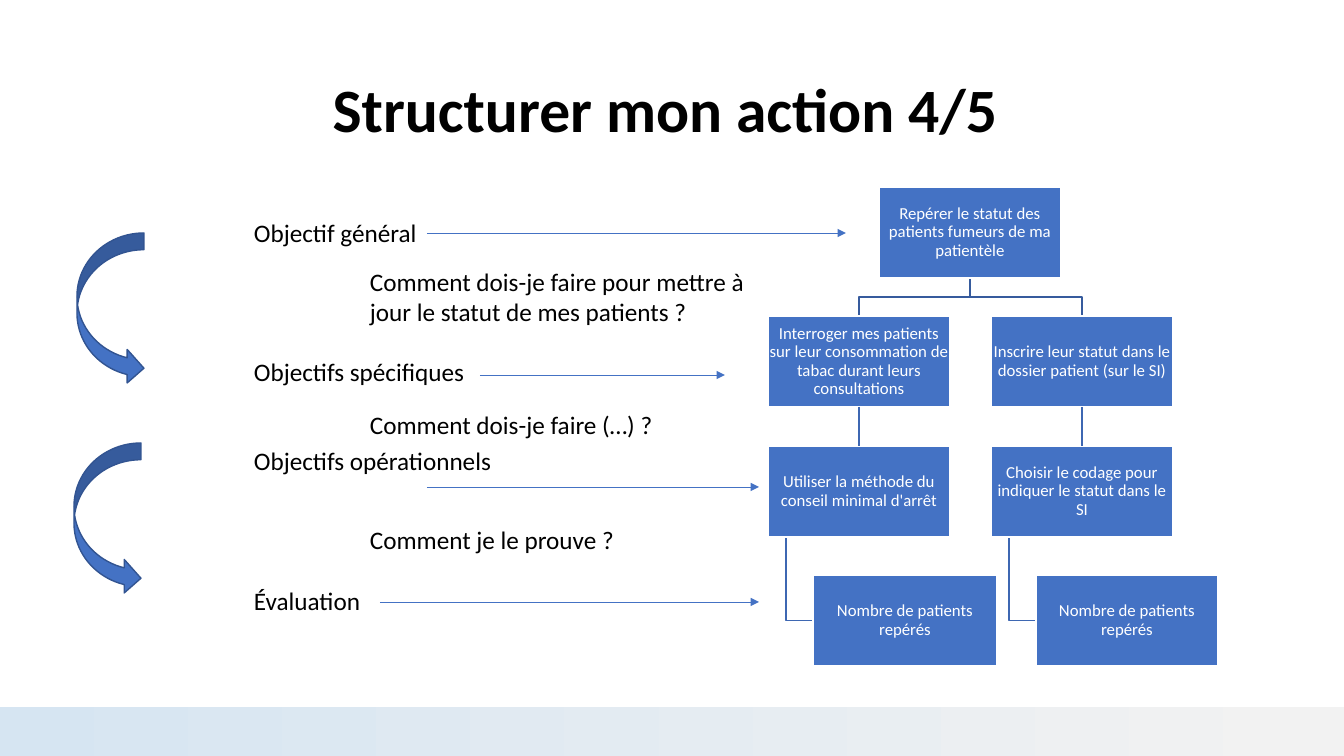
from lxml.etree import SubElement
from pptx import Presentation
from pptx.dml.color import RGBColor
from pptx.enum.shapes import MSO_CONNECTOR as Link, MSO_SHAPE as Shape
from pptx.enum.text import MSO_ANCHOR as Anchor, PP_ALIGN as Align
from pptx.oxml.ns import qn
from pptx.util import Pt

EMU_PER_PX = 914400 / 100.8
FONT = "Calibri"
COLORS = {
    "text": "000000", "white": "FFFFFF", "blue": "4472C4",
    "curve_line": "325491", "root_link": "365B9D", "link": "3E67B2",
    "band_start": "D6E5F2", "band_end": "F2F2F2",
}

# Organisation chart
NODE_W, NODE_H = 182, 91
ROW_TOPS = [187, 316, 446, 575]
ROOT_LEFT = 879
ROOT = "Repérer le statut des patients fumeurs de ma patientèle"
BRANCHES = [
    (768, 184,
     "Interroger mes patients sur leur consommation de tabac durant leurs consultations",
     "Utiliser la méthode du conseil minimal d'arrêt"),
    (991, 182,
     "Inscrire leur statut dans le dossier patient (sur le SI)",
     "Choisir le codage pour indiquer le statut dans le SI"),
]
EVALUATION = "Nombre de patients repérés"
EVALUATION_INDENT, STEM_INDENT = 45, 18

# Left-hand steps and questions: left, top, width, height, text
LABELS = [
    (244, 212, 231, 40, "Objectif général"),
    (244, 351, 258, 40, "Objectifs spécifiques"),
    (244, 440, 258, 72, "Objectifs opérationnels"),
    (244, 580, 258, 40, "Évaluation"),
    (360, 261, 400, 72, "Comment dois-je faire pour mettre à jour le statut de mes patients ?"),
    (360, 404, 400, 40, "Comment dois-je faire (…) ?"),
    (360, 519, 300, 40, "Comment je le prouve ?"),
]
# Arrows towards the chart: start, end, height on the slide
ARROWS = [(427, 846, 233), (480, 725, 375), (427, 759, 487), (380, 759, 602)]
CURVES = [(77, 233), (74, 443)]


def px(length):
    return round(length * EMU_PER_PX)


def color(name):
    return RGBColor.from_string(COLORS[name])


def style_text(frame, text, size, tint, align, bold=False, spacing=None):
    frame.word_wrap = True
    frame.text = text
    paragraph = frame.paragraphs[0]
    paragraph.alignment = align
    paragraph.line_spacing = spacing
    font = paragraph.runs[0].font
    font.name, font.size, font.bold = FONT, Pt(size), bold
    font.color.rgb = color(tint)


def set_line(item, tint, width):
    item.line.color.rgb = color(tint)
    item.line.width = Pt(width)


def add_label(slide, left, top, width, height, text):
    label = slide.shapes.add_textbox(px(left), px(top), px(width), px(height))
    style_text(label.text_frame, text, 18, "text", Align.LEFT)


def add_title(slide, text):
    title = slide.shapes.add_textbox(px(93), px(40), px(1159), px(146))
    title.text_frame.vertical_anchor = Anchor.MIDDLE
    style_text(title.text_frame, text, 44, "text", Align.CENTER, True, 0.9)


def add_filled(slide, preset, left, top, width, height, outline):
    shape = slide.shapes.add_shape(preset, px(left), px(top), px(width), px(height))
    shape.shadow.inherit = False
    shape.fill.solid()
    shape.fill.fore_color.rgb = color("blue")
    set_line(shape, outline, 1)
    return shape


def add_node(slide, left, row, text, width=NODE_W):
    node = add_filled(slide, Shape.RECTANGLE, left, ROW_TOPS[row], width, NODE_H, "white")
    frame = node.text_frame
    frame.margin_left = frame.margin_right = px(1)
    frame.margin_top = frame.margin_bottom = px(1)
    frame.vertical_anchor = Anchor.MIDDLE
    style_text(frame, text, 12, "white", Align.CENTER, spacing=0.9)
    return node


def add_elbow(slide, points, tint):
    start, *corners = [(px(x), px(y)) for x, y in points]
    builder = slide.shapes.build_freeform(*start)
    builder.add_line_segments(corners, close=False)
    elbow = builder.convert_to_shape()
    elbow.shadow.inherit = False
    elbow.fill.background()
    set_line(elbow, tint, 1)


def add_straight(slide, start, end, tint, width):
    line = slide.shapes.add_connector(Link.STRAIGHT, *map(px, start + end))
    set_line(line, tint, width)
    SubElement(line._element.spPr, qn("a:effectLst"))
    return line


def add_arrow(slide, start, end, y):
    arrow = add_straight(slide, (start, y), (end, y), "blue", 0.5)
    SubElement(arrow.line._get_or_add_ln(), qn("a:tailEnd"), type="triangle")


def add_branch(slide, left, evaluation_width, specific_text, operational_text):
    center, root_center = left + NODE_W / 2, ROOT_LEFT + NODE_W / 2
    root_bottom, _, operational_bottom, _ = [top + NODE_H for top in ROW_TOPS]
    fork = (root_bottom + ROW_TOPS[1]) / 2
    stem, evaluation_left = left + STEM_INDENT, left + EVALUATION_INDENT
    evaluation_middle = ROW_TOPS[3] + NODE_H / 2

    # Bent links lie under the boxes
    add_elbow(slide, [(root_center, root_bottom), (root_center, fork),
                      (center, fork), (center, ROW_TOPS[1])], "root_link")
    add_elbow(slide, [(stem, operational_bottom), (stem, evaluation_middle),
                      (evaluation_left, evaluation_middle)], "link")
    specific = add_node(slide, left, 1, specific_text)
    operational = add_node(slide, left, 2, operational_text)
    add_node(slide, evaluation_left, 3, EVALUATION, evaluation_width)
    link = add_straight(slide, (center, ROW_TOPS[1] + NODE_H),
                        (center, ROW_TOPS[2]), "link", 1)
    link.begin_connect(specific, 2)
    link.end_connect(operational, 0)


def add_band(slide):
    band = slide.shapes.add_shape(Shape.RECTANGLE, 0, px(707), px(1344), px(49))
    band.shadow.inherit = False
    band.line.fill.background()
    band.fill.gradient()
    band.fill.gradient_angle = 0
    stops = [(0, "band_start"), (0.98, "band_end")]
    for stop, (position, tint) in zip(band.fill.gradient_stops, stops):
        stop.position = position
        stop.color.rgb = color(tint)


def main():
    deck = Presentation()
    deck.slide_width, deck.slide_height = px(1344), px(756)
    slide = deck.slides.add_slide(deck.slide_layouts[6])

    add_title(slide, "Structurer mon action 4/5 ")

    # Organisation chart
    for branch in BRANCHES:
        add_branch(slide, *branch)
    add_node(slide, ROOT_LEFT, 0, ROOT)

    # Footer band
    add_band(slide)

    # Steps, questions and arrows
    for left, top in CURVES:
        add_filled(slide, Shape.CURVED_RIGHT_ARROW, left, top, 67, 152, "curve_line")
    for label in LABELS:
        add_label(slide, *label)
    for arrow in ARROWS:
        add_arrow(slide, *arrow)

    deck.save("out.pptx")


if __name__ == "__main__":
    main()
